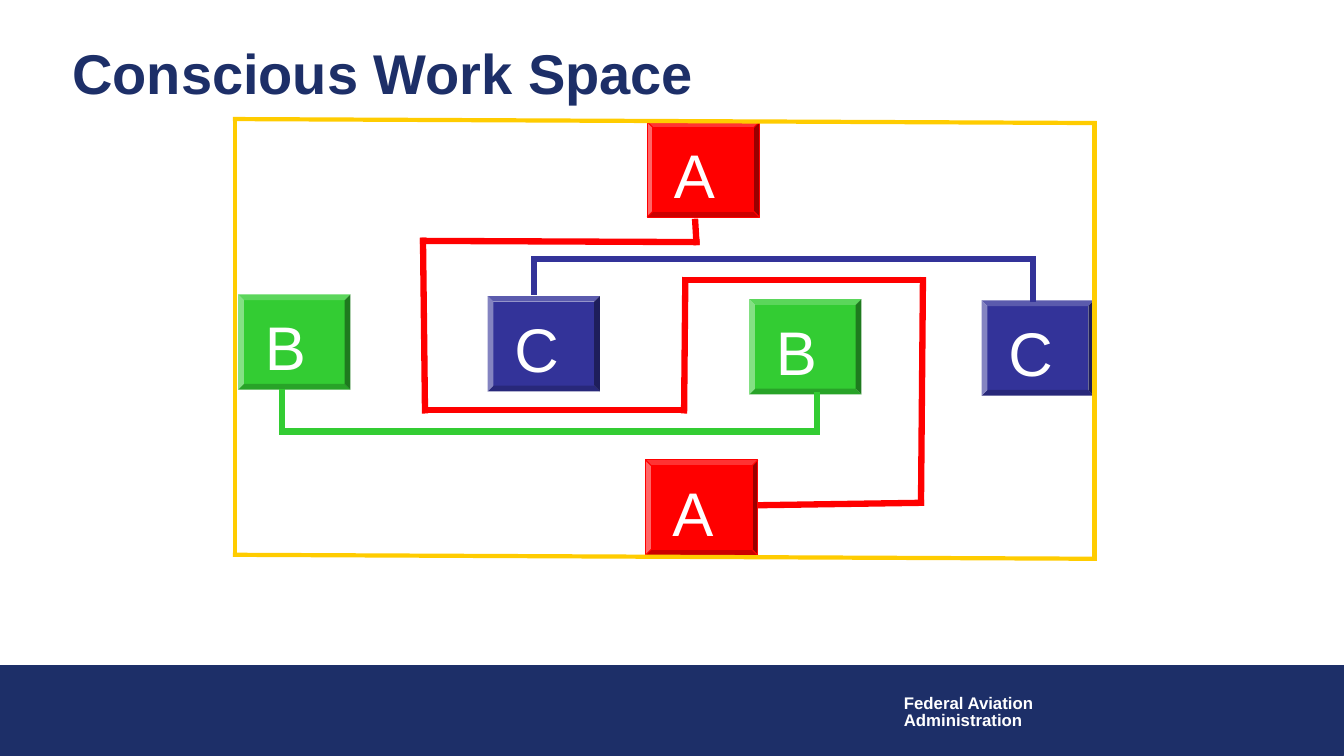
from itertools import pairwise

from lxml import etree
from pptx import Presentation
from pptx.dml.color import RGBColor
from pptx.enum.shapes import MSO_CONNECTOR, MSO_SHAPE
from pptx.enum.text import MSO_ANCHOR, PP_ALIGN
from pptx.oxml.ns import qn
from pptx.util import Cm, Pt

STRAIGHT = MSO_CONNECTOR.STRAIGHT
BEVEL = MSO_SHAPE.BEVEL
RECTANGLE = MSO_SHAPE.RECTANGLE
MIDDLE = MSO_ANCHOR.MIDDLE
LEFT = PP_ALIGN.LEFT

NAVY, WHITE, YELLOW = "1D2F68", "FFFFFF", "FFCC00"
RED, GREEN, BLUE = "FF0000", "33CC33", "333399"
BLOCK_COLORS = {"A": RED, "B": GREEN, "C": BLUE}
BLOCK_WIDTH, BLOCK_HEIGHT = 2.83, 2.4

BLOCKS = [
    ("A", 10.39, 0.07),
    ("C", 18.82, 4.57),
    ("B", 12.96, 4.54),
    ("C", 6.37, 4.46),
    ("B", 0.08, 4.42),
    ("A", 10.35, 8.59),
]
GREEN_ROUTE = [(1.19, 6.88), (1.19, 7.87), (14.67, 7.87), (14.67, 6.96)]
BLUE_ROUTE = [(7.54, 4.36), (7.54, 3.53), (20.11, 3.53), (20.11, 4.54)]
RED_ROUTE = [
    (11.6, 2.59), (11.63, 3.1), (4.74, 3.07), (4.79, 7.34), (11.32, 7.34),
    (11.35, 4.06), (17.34, 4.06), (17.29, 9.67), (13.26, 9.73),
]


def color(value):
    """Return the colour for a hex string."""
    return RGBColor.from_string(value)


def add_run(paragraph, text, size, fill, bold=False):
    """Add one formatted Arial run to a paragraph."""
    run = paragraph.add_run()
    run.text = text
    run.font.name = "Arial"
    run.font.size = Pt(size)
    run.font.bold = bold
    run.font.color.rgb = color(fill)


def add_route(slide, left, top, points, line_color, width):
    """Join the points, given relative to left and top, with straight lines."""
    for (x1, y1), (x2, y2) in pairwise(points):
        connector = slide.shapes.add_connector(
            STRAIGHT, Cm(left + x1), Cm(top + y1), Cm(left + x2), Cm(top + y2))
        connector.line.color.rgb = color(line_color)
        connector.line.width = Pt(width)
        properties = connector._element.spPr
        properties.find(qn("a:ln")).set("cap", "sq")
        etree.SubElement(properties, qn("a:effectLst"))


def add_block(slide, left, top, letter):
    """Add one bevelled, lettered block."""
    shape = slide.shapes.add_shape(
        BEVEL, Cm(left), Cm(top), Cm(BLOCK_WIDTH), Cm(BLOCK_HEIGHT))
    shape.adjustments[0] = 0.06
    shape.shadow.inherit = False
    shape.fill.solid()
    shape.fill.fore_color.rgb = color(BLOCK_COLORS[letter])
    if letter == "A":
        shape.line.color.rgb = color(RED)
        shape.line.width = Pt(0.75)
    else:
        shape.line.fill.background()
    frame = shape.text_frame
    frame.vertical_anchor = MIDDLE
    frame.margin_left, frame.margin_right = Cm(0.53), 0
    frame.margin_top, frame.margin_bottom = Cm(0.2), 0
    paragraph = frame.paragraphs[0]
    paragraph.alignment = LEFT
    add_run(paragraph, letter, 44, WHITE)


def add_workspace(slide, left, top, width, height):
    """Add the blocks, their routes and the slightly slanted frame."""
    for letter, x, y in BLOCKS:
        add_block(slide, left + x, top + y, letter)
    add_route(slide, left, top, GREEN_ROUTE, GREEN, 4.5)
    add_route(slide, left, top, BLUE_ROUTE, BLUE, 4.5)
    slant = 0.1
    corners = [(0, 0), (width, slant), (width, height), (0, height - slant), (0, 0)]
    add_route(slide, left, top, corners, YELLOW, 3)
    add_route(slide, left, top, RED_ROUTE, RED, 4.5)


def add_title(slide, left, top, width, height):
    """Place and format the title."""
    title = slide.shapes.title
    title.left, title.top = Cm(left), Cm(top)
    title.width, title.height = Cm(width), Cm(height)
    title.text_frame.vertical_anchor = MIDDLE
    paragraph = title.text_frame.paragraphs[0]
    paragraph.alignment = LEFT
    add_run(paragraph, "Conscious Work Space", 40, NAVY, True)


def add_footer(slide, left, top, width, height):
    """Add the bottom band with the name of the agency."""
    band = slide.shapes.add_shape(RECTANGLE, Cm(left), Cm(top), Cm(width), Cm(height))
    band.shadow.inherit = False
    band.fill.solid()
    band.fill.fore_color.rgb = color(NAVY)
    band.line.color.rgb = color(NAVY)
    band.line.width = Pt(0.75)
    box = slide.shapes.add_textbox(Cm(left + 22.53), Cm(top + 0.64), Cm(3.81), Cm(1.12))
    frame = box.text_frame
    frame.word_wrap = False
    for index, text in enumerate(("Federal Aviation", "Administration")):
        paragraph = frame.add_paragraph() if index else frame.paragraphs[0]
        paragraph.alignment = LEFT
        paragraph.line_spacing = 0.85
        add_run(paragraph, text, 12, WHITE, True)


def main():
    """Build and save the presentation."""
    presentation = Presentation()
    presentation.slide_width, presentation.slide_height = Cm(33.87), Cm(19.05)
    slide = presentation.slides.add_slide(presentation.slide_layouts[5])
    add_footer(slide, 0, 16.76, 33.87, 2.27)
    add_title(slide, 1.57, 0.97, 31.37, 1.7)
    add_workspace(slide, 5.92, 3, 21.66, 11.08)
    presentation.save("out.pptx")


if __name__ == "__main__":
    main()
